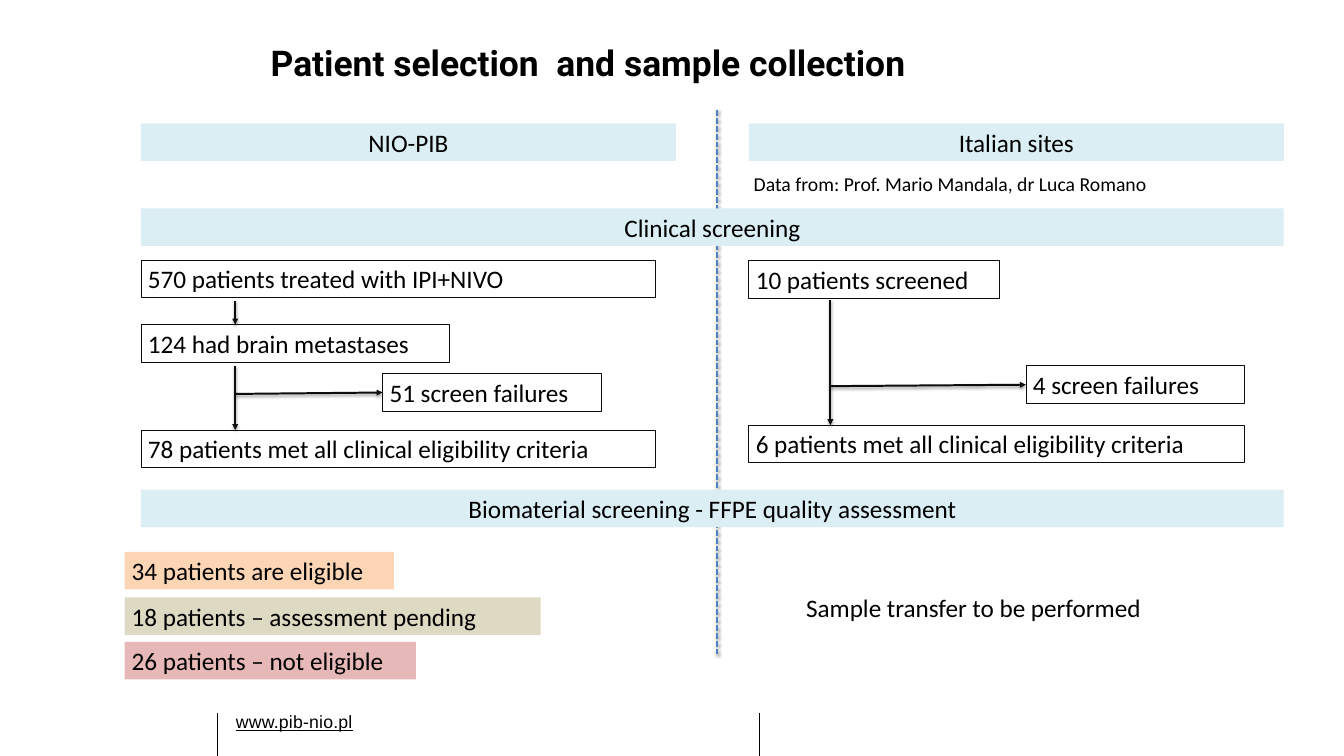
from dataclasses import dataclass

from lxml import etree
from pptx import Presentation
from pptx import util as u
from pptx.dml.color import RGBColor
from pptx.enum import dml, shapes, text
from pptx.oxml import ns

PX = 9144  # EMU per px, 100 px to the inch
COLORS = {
    "black": "000000", "ink": "0D0D0D", "divider": "4F81BD", "band": "DBEEF4",
    "eligible": "FCD5B5", "pending": "DDD9C3", "rejected": "E6B9B8",
}
BODY = {"name": "Calibri", "size": u.Pt(25.6)}
NOTE = {"name": "Calibri", "size": u.Pt(20)}
TITLE = {"name": "Roboto", "size": u.Pt(36), "bold": True}
LINK = {"name": "Arial", "size": u.Pt(18), "underline": True}
ROW_H = 53
LEFT, RIGHT = 199, 1057  # column edges
LEFT_FLOW, RIGHT_FLOW = 332, 1172  # arrow axes


@dataclass
class Box:
    label: str
    x: int
    y: int
    w: int
    fill: str = ""
    outlined: bool = False
    centered: bool = False


@dataclass
class Label:
    label: str
    x: int
    y: int
    w: int
    h: int
    font: dict
    inset: bool = True


@dataclass
class Line:
    x1: int
    y1: int
    x2: int
    y2: int
    color: str = "ink"
    width: float = 2
    arrow: bool = True
    dashed: bool = False
    shadow: bool = True


def band(label: str, x: int, y: int, w: int) -> Box:
    return Box(label, x, y, w, "band", centered=True)


def step(label: str, x: int, y: int, w: int) -> Box:
    return Box(label, x, y, w, outlined=True)


BOXES = [
    # Section headings
    band("NIO-PIB", LEFT, 174, 755),
    band("Italian sites", RIGHT, 174, 755),
    band("Clinical screening", LEFT, 294, 1613),
    band("Biomaterial screening - FFPE quality assessment", LEFT, 691, 1613),
    # Screening steps
    step("570 patients treated with IPI+NIVO", LEFT, 367, 726),
    step("124 had brain metastases", LEFT, 458, 435),
    step("51 screen failures", 540, 527, 309),
    step("78 patients met all clinical eligibility criteria", LEFT, 607, 726),
    step("10 patients screened", RIGHT, 368, 354),
    step("4 screen failures", 1448, 516, 309),
    step("6 patients met all clinical eligibility criteria", RIGHT, 600, 700),
    # Quality assessment results
    Box("34 patients are eligible", 176, 779, 380, "eligible"),
    Box("18 patients – assessment pending", 176, 843, 587, "pending"),
    Box("26 patients – not eligible", 176, 906, 411, "rejected"),
]
LABELS = [
    Label("Patient selection  and sample collection", 382, 58, 1454, 97, TITLE, False),
    Label("Data from: Prof. Mario Mandala, dr Luca Romano", 1054, 238, 755, 44, NOTE),
    Label("Sample transfer to be performed", 1128, 831, 534, ROW_H, BODY),
]
FOOTER = Label("www.pib-nio.pl", 332, 1006, 296, 27, LINK, False)
DIVIDER = Line(1012, 155, 1012, 925, "divider", arrow=False, dashed=True)
FOOTER_RULES = [Line(x, 1006, x, 1067, "black", 0.25, arrow=False, shadow=False)
                for x in (1071, 307)]
ARROWS = [
    Line(LEFT_FLOW, 516, LEFT_FLOW, 607),
    Line(RIGHT_FLOW, 424, RIGHT_FLOW, 600),
    Line(LEFT_FLOW, 425, LEFT_FLOW, 458),
    Line(LEFT_FLOW, 556, 540, 554),
    Line(RIGHT_FLOW, 545, 1448, 543),
]


def rgb(name: str) -> RGBColor:
    return RGBColor.from_string(COLORS[name])


def px(*lengths: int) -> list[u.Emu]:
    return [u.Emu(n * PX) for n in lengths]


def write(sp, label: str, font: dict):
    tf = sp.text_frame
    tf.word_wrap = True
    p = tf.paragraphs[0]
    p.alignment = text.PP_ALIGN.LEFT
    r = p.add_run()
    r.text = label
    for key, value in font.items():
        setattr(r.font, key, value)
    r.font.color.rgb = rgb("black")
    return p


def draw_box(s, box: Box) -> None:
    sp = s.shapes.add_shape(shapes.MSO_SHAPE.RECTANGLE, *px(box.x, box.y, box.w, ROW_H))
    sp.shadow.inherit = False
    if box.fill:
        sp.fill.solid()
        sp.fill.fore_color.rgb = rgb(box.fill)
    else:
        sp.fill.background()
    if box.outlined:
        sp.line.color.rgb = rgb("ink")
        sp.line.width = u.Pt(0.75)
    else:
        sp.line.fill.background()
    p = write(sp, box.label, BODY)
    if box.centered:
        p.alignment = text.PP_ALIGN.CENTER


def draw_label(s, item: Label):
    sp = s.shapes.add_textbox(*px(item.x, item.y, item.w, item.h))
    if not item.inset:
        for side in ("left", "top", "right", "bottom"):
            setattr(sp.text_frame, f"margin_{side}", 0)
    return write(sp, item.label, item.font)


def draw_line(s, line: Line) -> None:
    sp = s.shapes.add_connector(shapes.MSO_CONNECTOR.STRAIGHT,
                                *px(line.x1, line.y1, line.x2, line.y2))
    sp.line.color.rgb = rgb(line.color)
    sp.line.width = u.Pt(line.width)
    if line.dashed:
        sp.line.dash_style = dml.MSO_LINE.SQUARE_DOT
    if line.arrow:
        etree.SubElement(sp.line._get_or_add_ln(), ns.qn("a:tailEnd"), type="triangle")
    effects = etree.SubElement(sp._element.spPr, ns.qn("a:effectLst"))
    if line.shadow:
        shadow = etree.SubElement(effects, ns.qn("a:outerShdw"), blurRad=str(u.Pt(3.1)),
                                  dist=str(u.Pt(1.6)), dir="5400000", rotWithShape="0")
        color = etree.SubElement(shadow, ns.qn("a:srgbClr"), val=COLORS["black"])
        etree.SubElement(color, ns.qn("a:alpha"), val="38000")


def draw_footer(s) -> None:
    for rule in FOOTER_RULES:
        draw_line(s, rule)
    p = draw_label(s, FOOTER)
    p.line_spacing = u.Pt(19.2)
    p._p.get_or_add_pPr().set("marL", str(PX))
    p.runs[0]._r.get_or_add_rPr().set("spc", "20")


def main() -> None:
    prs = Presentation()
    prs.slide_width, prs.slide_height = px(1897, 1067)
    s = prs.slides.add_slide(prs.slide_layouts[6])
    draw_footer(s)
    draw_line(s, DIVIDER)  # behind the bands
    for box in BOXES:
        draw_box(s, box)
    for item in LABELS:
        draw_label(s, item)
    for arrow in ARROWS:
        draw_line(s, arrow)
    prs.save("out.pptx")


if __name__ == "__main__":
    main()
